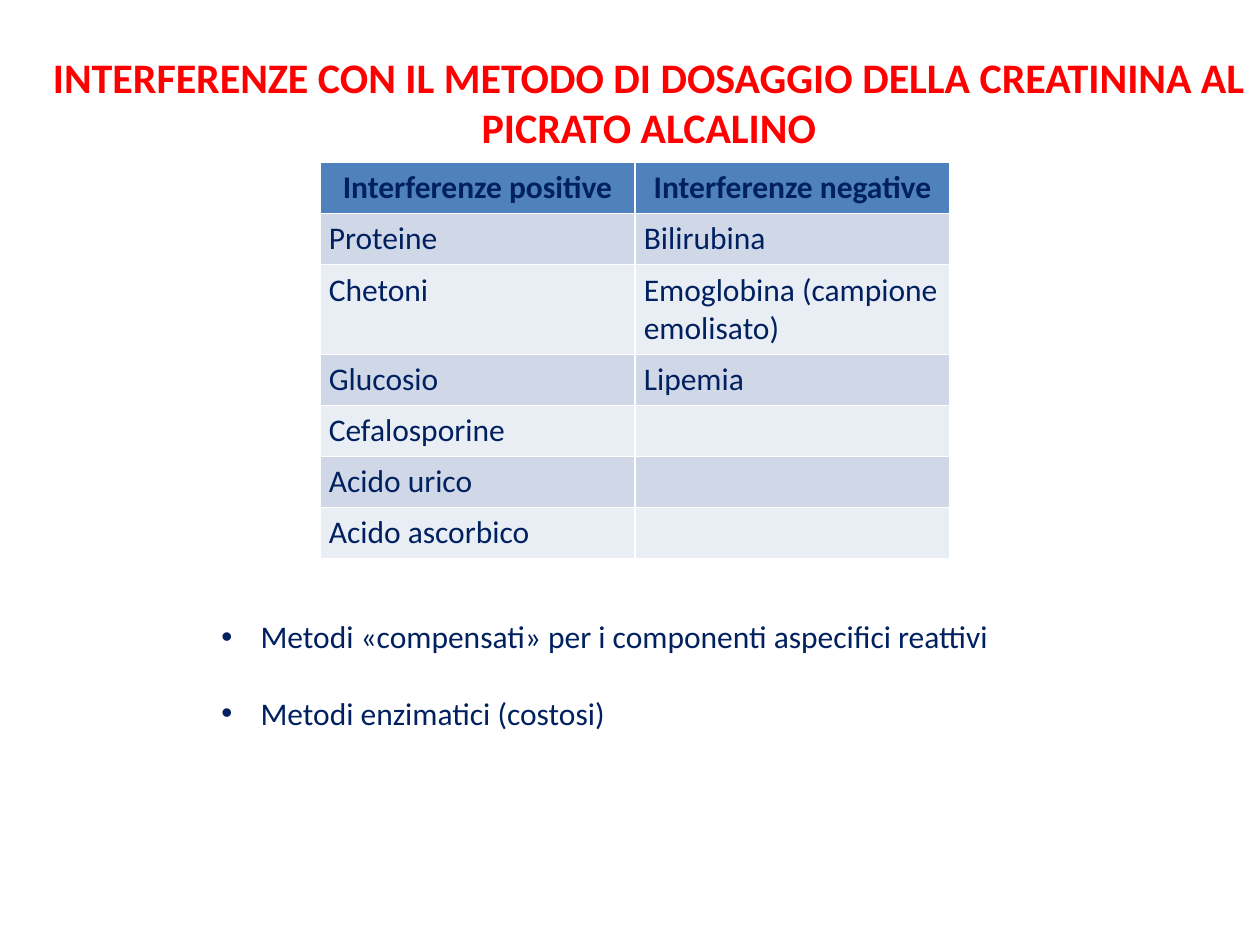
from lxml.etree import SubElement
from pptx import Presentation
from pptx.dml.color import RGBColor
from pptx.enum.text import PP_ALIGN
from pptx.oxml.ns import qn
from pptx.util import Inches, Pt

TITLE = "INTERFERENZE CON IL METODO DI DOSAGGIO DELLA CREATININA AL PICRATO ALCALINO"
INTERFERENCES = [
    ("Interferenze positive", "Interferenze negative"),
    ("Proteine", "Bilirubina"),
    ("Chetoni", "Emoglobina (campione emolisato)"),
    ("Glucosio", "Lipemia"),
    ("Cefalosporine", ""),
    ("Acido urico", ""),
    ("Acido ascorbico", ""),
]
REMEDIES = [
    "Metodi «compensati» per i componenti aspecifici reattivi",
    "Metodi enzimatici (costosi)",
]

RED = RGBColor(0xFF, 0x00, 0x00)
NAVY = RGBColor(0x00, 0x20, 0x60)
HEADER_BLUE = RGBColor(0x4F, 0x81, 0xBD)
BANDS = (RGBColor(0xE9, 0xED, 0xF4), RGBColor(0xD0, 0xD8, 0xE8))

COLUMN_WIDTH, ROW_HEIGHT = 2.5, 0.405
BODY_SIZE, TITLE_SIZE = 18, 24
BULLET_INDENT = Inches(0.31)


def add_run(paragraph, text, size=BODY_SIZE, color=NAVY, bold=False):
    run = paragraph.add_run()
    run.text = text
    run.font.name = "Calibri"
    run.font.size = Pt(size)
    run.font.bold = bold
    run.font.color.rgb = color


def add_text_frame(slide, *box):
    frame = slide.shapes.add_textbox(*map(Inches, box)).text_frame
    frame.word_wrap = True
    return frame


def add_bullet(paragraph):
    properties = paragraph._p.get_or_add_pPr()
    properties.set("marL", str(BULLET_INDENT))
    properties.set("indent", str(-BULLET_INDENT))
    SubElement(properties, qn("a:buFont")).set("typeface", "Arial")
    SubElement(properties, qn("a:buChar")).set("char", "•")


def add_interferences(slide, left, top):
    rows, columns = len(INTERFERENCES), len(INTERFERENCES[0])
    size = (columns * COLUMN_WIDTH, rows * ROW_HEIGHT)
    table = slide.shapes.add_table(
        rows, columns, *map(Inches, (left, top, *size))).table
    for r, entries in enumerate(INTERFERENCES):
        is_header = r == 0
        for c, entry in enumerate(entries):
            cell = table.cell(r, c)
            cell.margin_left = cell.margin_right = Inches(0.07)
            cell.fill.solid()
            cell.fill.fore_color.rgb = HEADER_BLUE if is_header else BANDS[r % 2]
            paragraph = cell.text_frame.paragraphs[0]
            if is_header:
                paragraph.alignment = PP_ALIGN.CENTER
            if entry:
                add_run(paragraph, entry, bold=is_header)


def add_remedies(slide, *box):
    frame = add_text_frame(slide, *box)
    for i, remedy in enumerate(REMEDIES):
        paragraph = frame.add_paragraph() if i else frame.paragraphs[0]
        if i:
            paragraph.space_before = Pt(22)
        add_bullet(paragraph)
        add_run(paragraph, remedy)


def main():
    deck = Presentation()
    deck.slide_width, deck.slide_height = Inches(10), Inches(7.5)
    slide = deck.slides.add_slide(deck.slide_layouts[6])

    add_interferences(slide, 2.54, 1.29)
    add_remedies(slide, 1.66, 4.85, 6.97, 1.01)
    title = add_text_frame(slide, 0.3, 0.36, 9.7, 0.91).paragraphs[0]
    title.alignment = PP_ALIGN.CENTER
    add_run(title, TITLE, TITLE_SIZE, RED, bold=True)

    deck.save("out.pptx")


if __name__ == "__main__":
    main()
